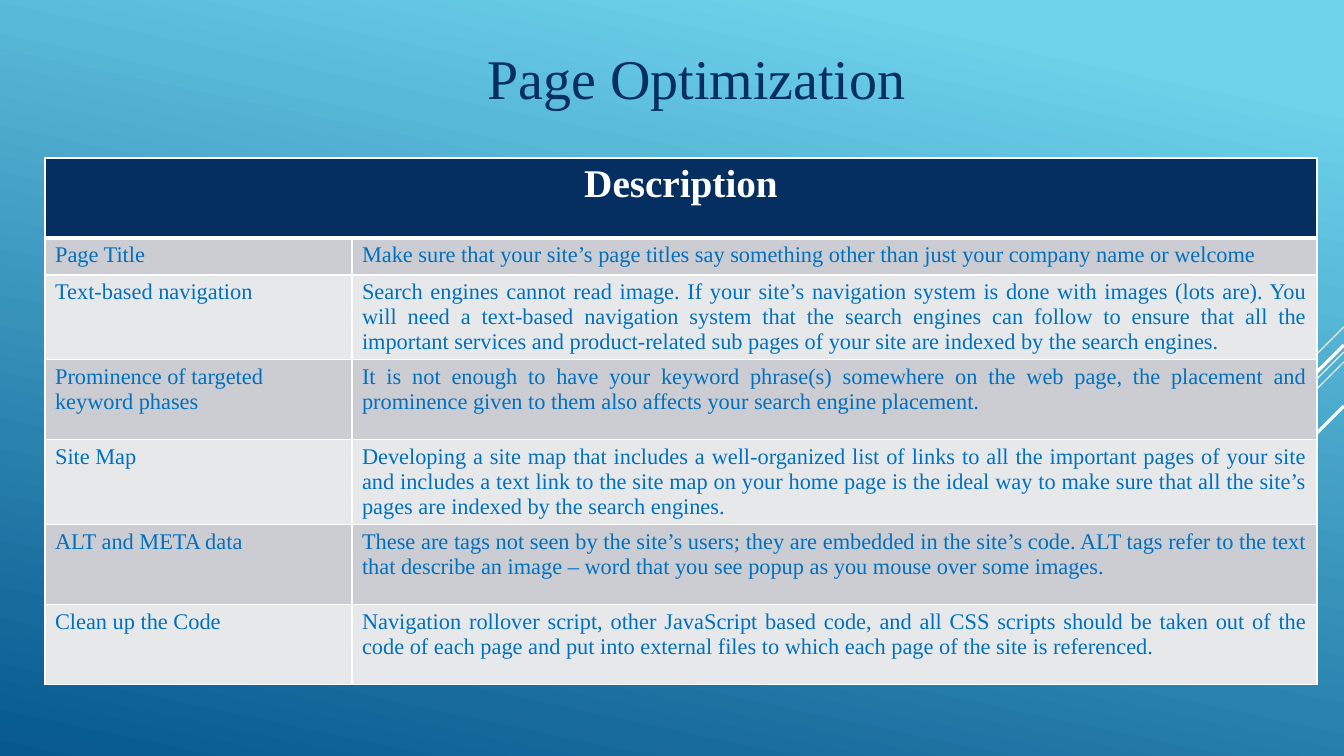
from dataclasses import dataclass

from lxml import etree
from pptx import Presentation
from pptx import util as u
from pptx.dml import color
from pptx.enum import shapes, text
from pptx.oxml import ns

PX = 914400 / 100.8
WIDTH, HEIGHT = 1344, 756
FONT = "Times New Roman"
COLORS = {
    "sky": "6ED2EB",
    "deep": "06588E",
    "navy": "052F61",
    "blue": "0070C0",
    "white": "FFFFFF",
    "dark": "CCCDD2",
    "light": "E7E8EA",
}
LEFT, CENTER, FULL = text.PP_ALIGN.LEFT, text.PP_ALIGN.CENTER, text.PP_ALIGN.JUSTIFY


@dataclass
class Streak:
    top: int
    reach: int
    weight: float


@dataclass
class Entry:
    label: str
    body: str
    height: int = 80
    align: text.PP_ALIGN = FULL


STREAKS = [
    Streak(327, 101, 0.75),
    Streak(352, 329, 0.75),
    Streak(362, 208, 0.75),
    Streak(345, 193, 2.25),
    Streak(406, 140, 2.25),
]

ENTRIES = [
    Entry(
        "Page Title",
        "Make sure that your site’s page titles say something other than just "
        "your company name or welcome",
        height=37,
    ),
    Entry(
        "Text-based navigation",
        "Search engines cannot read image. If your site’s navigation system is done "
        "with images (lots are). You will need a text-based navigation system that the "
        "search engines can follow to ensure that all the important services and "
        "product-related sub pages of your site are indexed by the search engines.",
    ),
    Entry(
        "Prominence of targeted keyword phases",
        "It is not enough to have your keyword phrase(s) somewhere on the web page, the "
        "placement and prominence given to them also affects your search engine placement.",
        align=LEFT,
    ),
    Entry(
        "Site Map",
        "Developing a site map that includes a well-organized list of links to all the "
        "important pages of your site and includes a text link to the site map on your "
        "home page is the ideal way to make sure that all the site’s pages are indexed "
        "by the search engines.",
    ),
    Entry(
        "ALT and META data",
        "These are tags not seen by the site’s users; they are embedded in the site’s "
        "code. ALT tags refer to the text that describe an image – word that you see "
        "popup as you mouse over some images.",
    ),
    Entry(
        "Clean up the Code",
        "Navigation rollover script, other JavaScript based code, and all CSS scripts "
        "should be taken out of the code of each page and put into external files to "
        "which each page of the site is referenced.",
    ),
]


def px(count: int) -> int:
    return round(count * PX)


def rgb(name: str) -> color.RGBColor:
    return color.RGBColor.from_string(COLORS[name])


def write(frame, words: str, *, size: int, tint: str, align=FULL, bold: bool = False) -> None:
    para = frame.paragraphs[0]
    para.alignment = align
    run = para.add_run()
    run.text = words
    run.font.name = FONT
    run.font.size = u.Pt(size)
    run.font.bold = bold
    run.font.color.rgb = rgb(tint)


def paint_back(slide) -> None:
    fill = slide.background.fill
    fill.gradient()
    fill.gradient_angle = 258
    for stop, place, name in zip(fill.gradient_stops, (0.1, 1), ("sky", "deep")):
        stop.position = place
        stop.color.rgb = rgb(name)


def draw_streak(slide, streak: Streak) -> None:
    line = slide.shapes.add_connector(
        shapes.MSO_CONNECTOR.STRAIGHT,
        px(WIDTH), px(streak.top),
        px(WIDTH - streak.reach), px(streak.top + streak.reach),
    )
    line.line.color.rgb = rgb("white")
    line.line.width = u.Pt(streak.weight)
    etree.SubElement(line._element.spPr, ns.qn("a:effectLst"))


def style_cell(cell, fill: str, base: int = 1) -> None:
    props = cell._tc.get_or_add_tcPr()
    for side, weight in (("L", 1), ("R", 1), ("T", 1), ("B", base)):
        edge = etree.SubElement(props, ns.qn(f"a:ln{side}"), w=str(u.Pt(weight)))
        solid = etree.SubElement(edge, ns.qn("a:solidFill"))
        etree.SubElement(solid, ns.qn("a:srgbClr"), val=COLORS["white"])
    cell.fill.solid()
    cell.fill.fore_color.rgb = rgb(fill)


def draw_table(slide) -> None:
    heights = [80] + [entry.height for entry in ENTRIES]
    widths = [307, 965]
    grid = slide.shapes.add_table(
        len(heights), len(widths), px(45), px(158), px(sum(widths)), px(sum(heights))
    ).table
    for col, width in zip(grid.columns, widths):
        col.width = px(width)
    for row, height in zip(grid.rows, heights):
        row.height = px(height)

    head = grid.cell(0, 0)
    head.merge(grid.cell(0, 1))
    for cell in grid.rows[0].cells:
        style_cell(cell, "navy", base=3)
    write(head.text_frame, "Description", size=28, tint="white", align=CENTER, bold=True)

    for index, entry in enumerate(ENTRIES, 1):
        pairs = ((entry.label, entry.align), (entry.body, FULL))
        for cell, (words, align) in zip(grid.rows[index].cells, pairs):
            style_cell(cell, "dark" if index % 2 else "light")
            write(cell.text_frame, words, size=16, tint="blue", align=align)


def draw_title(slide) -> None:
    title = slide.shapes.title
    title.left, title.top, title.width, title.height = map(px, (440, 38, 513, 78))
    frame = title.text_frame
    frame.auto_size = text.MSO_AUTO_SIZE.NONE
    frame.vertical_anchor = text.MSO_ANCHOR.TOP
    frame.word_wrap = True
    write(frame, "Page Optimization", size=40, tint="navy", align=CENTER)


def main() -> None:
    deck = Presentation()
    deck.slide_width, deck.slide_height = px(WIDTH), px(HEIGHT)
    slide = deck.slides.add_slide(deck.slide_layouts[5])
    paint_back(slide)
    for streak in STREAKS:
        draw_streak(slide, streak)
    draw_table(slide)
    draw_title(slide)
    deck.save("out.pptx")


if __name__ == "__main__":
    main()
